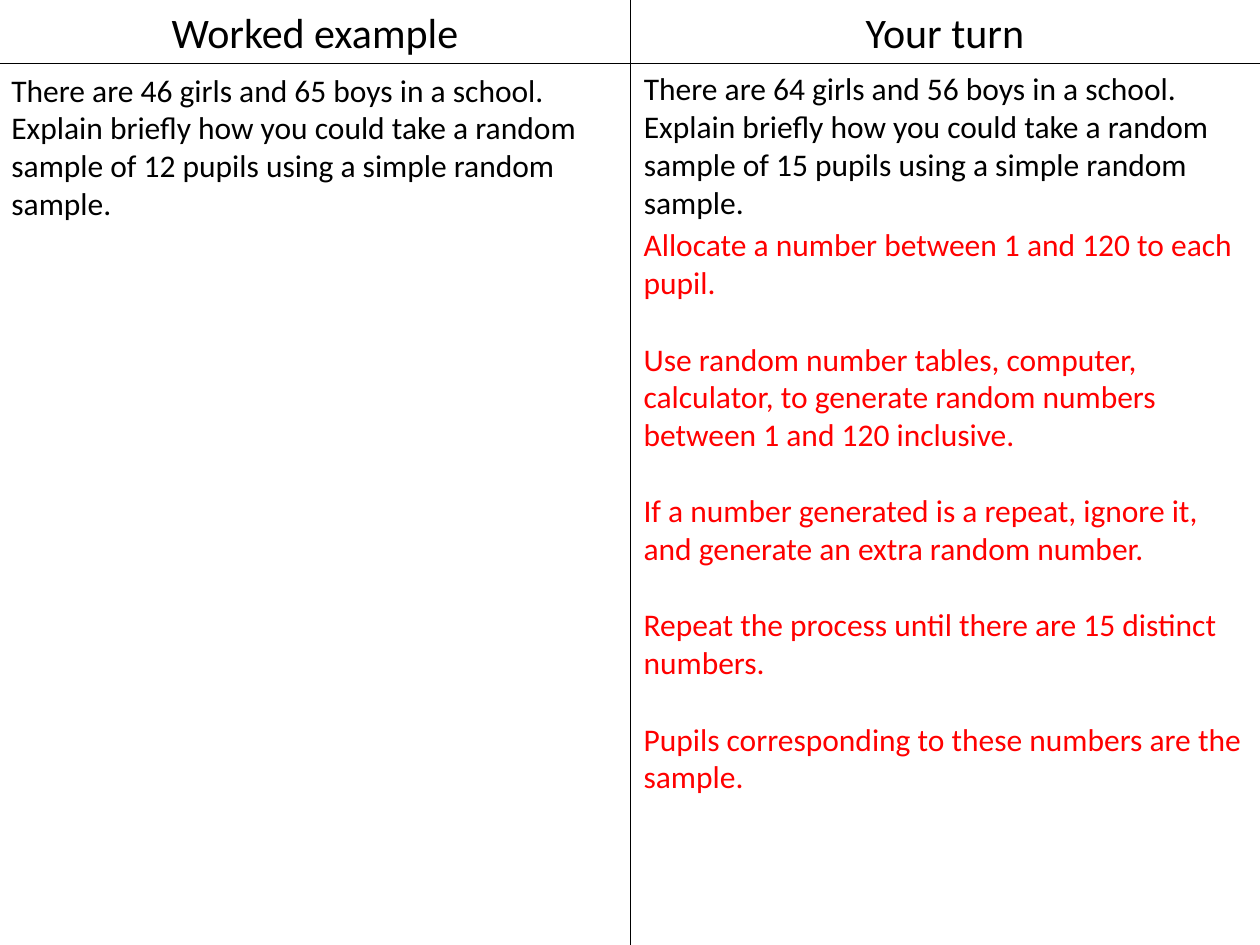
from dataclasses import dataclass

from lxml import etree
from pptx import Presentation
from pptx import util as u
from pptx.dml.color import RGBColor
from pptx.enum import shapes, text
from pptx.oxml.ns import qn


@dataclass(frozen=True)
class Theme:
    font: str = "Calibri"
    ink: RGBColor = RGBColor(0, 0, 0)
    answer: RGBColor = RGBColor(255, 0, 0)
    heading_size: int = 24
    body_size: int = 18
    rule_width: float = 0.5
    paragraph_gap: int = 22


class SlideBuilder:
    def __init__(self, slide, theme):
        self.slide = slide
        self.theme = theme

    def rule(self, start, end):
        points = [u.Inches(value) for value in (*start, *end)]
        connector = self.slide.shapes.add_connector(shapes.MSO_CONNECTOR.STRAIGHT, *points)
        connector.line.color.rgb = self.theme.ink
        connector.line.width = u.Pt(self.theme.rule_width)
        etree.SubElement(connector.element.spPr, qn("a:effectLst"))

    def fill_text(self, shape, box, paragraphs, size, color, alignment):
        shape.left, shape.top, shape.width, shape.height = [u.Inches(value) for value in box]
        frame = shape.text_frame
        frame.text = "\n".join(paragraphs)
        frame.word_wrap = True
        frame.auto_size = text.MSO_AUTO_SIZE.NONE
        frame.vertical_anchor = text.MSO_ANCHOR.TOP
        for index, paragraph in enumerate(frame.paragraphs):
            paragraph.alignment = alignment
            paragraph.space_before = u.Pt(self.theme.paragraph_gap if index else 0)
            properties = paragraph._p.get_or_add_pPr()
            properties.set("marL", "0")
            properties.set("indent", "0")
            etree.SubElement(properties, qn("a:buNone"))
            for run in paragraph.runs:
                run.font.name = self.theme.font
                run.font.size = u.Pt(size)
                run.font.bold = False
                run.font.color.rgb = color

    def placeholder(self, index):
        return next(shape for shape in self.slide.placeholders
                    if shape.placeholder_format.idx == index)

    def heading(self, index, box, wording):
        self.fill_text(self.placeholder(index), box, [wording], self.theme.heading_size,
                       self.theme.ink, text.PP_ALIGN.CENTER)

    def question(self, index, box, wording):
        self.fill_text(self.placeholder(index), box, [wording], self.theme.body_size,
                       self.theme.ink, text.PP_ALIGN.LEFT)

    def answer(self, box, steps):
        shape = self.slide.shapes.add_textbox(0, 0, 0, 0)
        self.fill_text(shape, box, steps, self.theme.body_size,
                       self.theme.answer, text.PP_ALIGN.LEFT)

    def remove_title(self):
        title = self.slide.shapes.title.element
        title.getparent().remove(title)


QUESTION = ("There are {girls} girls and {boys} boys in a school. Explain briefly how you could "
            "take a random sample of {sample} pupils using a simple random sample.")
ANSWER_STEPS = [
    "Allocate a number between 1 and 120 to each pupil.",
    "Use random number tables, computer, calculator, to generate random numbers "
    "between 1 and 120 inclusive.",
    "If a number generated is a repeat, ignore it, and generate an extra random number.",
    "Repeat the process until there are 15 distinct numbers.",
    "Pupils corresponding to these numbers are the sample.",
]
WIDTH, HEIGHT = 10, 7.5
COLUMN = WIDTH / 2
HEADER = 0.5


def main():
    presentation = Presentation()
    presentation.slide_width = u.Inches(WIDTH)
    presentation.slide_height = u.Inches(HEIGHT)
    comparison_layout = presentation.slide_layouts[4]
    builder = SlideBuilder(presentation.slides.add_slide(comparison_layout), Theme())

    builder.remove_title()
    builder.rule((0, HEADER), (WIDTH, HEADER))
    builder.rule((COLUMN, 0), (COLUMN, HEIGHT))
    builder.heading(1, (0, 0, COLUMN, HEADER), "Worked example")
    builder.heading(3, (COLUMN, 0, COLUMN, HEADER), "Your turn")
    builder.question(2, (-0.01, 0.51, COLUMN, 1.31),
                     QUESTION.format(girls=46, boys=65, sample=12))
    builder.question(4, (5.01, 0.5, COLUMN, 1.31),
                     QUESTION.format(girls=64, boys=56, sample=15))
    builder.answer((5.01, 1.74, COLUMN, 4.64), ANSWER_STEPS)

    presentation.save("out.pptx")


if __name__ == "__main__":
    main()
